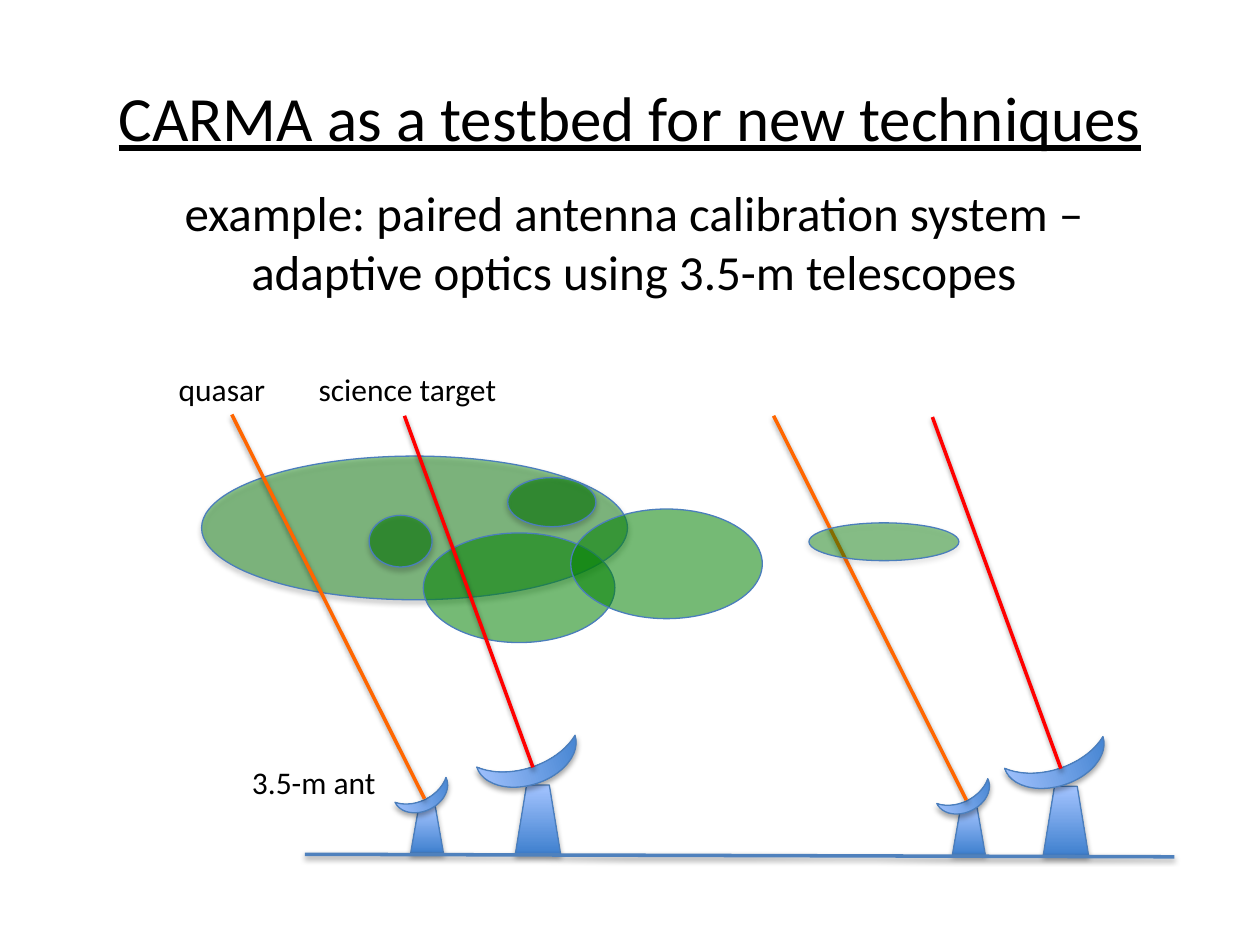
from lxml.etree import SubElement
from pptx import Presentation
from pptx.dml.color import RGBColor
from pptx.enum.shapes import MSO_CONNECTOR, MSO_SHAPE
from pptx.enum.text import MSO_ANCHOR, PP_ALIGN
from pptx.oxml.ns import qn
from pptx.util import Emu, Pt

PX = 9144  # EMU in one px, 100 px to the inch
FONT = "Calibri"
BLACK = "000000"
OUTLINE = "4B7EBC"
GROUND = "4F81BD"
CLOUD = "008000"
METAL_DARK, METAL_LIGHT = "3F80CE", "A4C4FF"
SCIENCE_BEAM, QUASAR_BEAM = "FF0000", "FF6600"

# Parts are placed relative to the top left corner of the pedestal.
LARGE_ANTENNA = dict(pedestal=(36, 55), dish=(-1, -55, 27, 82), tilt=252.1,
                     focus=(14, -14), reach=(-102, -279), beam=SCIENCE_BEAM)
SMALL_ANTENNA = dict(pedestal=(26, 37), dish=(3, -28, 17, 45), tilt=244,
                     focus=(11, -6), reach=(-153, -305), beam=QUASAR_BEAM)


def px(*lengths):
    return [Emu(length * PX) for length in lengths]


def rgb(value):
    return RGBColor.from_string(value)


def set_shadow(shape, opacity, distance=1.8):
    """Replace the theme shadow by a soft one below; opacity 0 leaves none."""
    effects = SubElement(shape._element.spPr, qn("a:effectLst"))
    if opacity:
        shadow = SubElement(effects, qn("a:outerShdw"), blurRad=str(Pt(3.1)),
                            dist=str(Pt(distance)), dir="5400000",
                            rotWithShape="0")
        color = SubElement(shadow, qn("a:srgbClr"), val=BLACK)
        SubElement(color, qn("a:alpha"), val=str(opacity * 1000))


def add_text(slide, text, box, size, align=PP_ALIGN.LEFT,
             anchor=MSO_ANCHOR.TOP, underline=False):
    frame = slide.shapes.add_textbox(*px(*box)).text_frame
    frame.word_wrap = True
    frame.vertical_anchor = anchor
    paragraph = frame.paragraphs[0]
    paragraph.alignment = align
    run = paragraph.add_run()
    run.text = text
    run.font.name = FONT
    run.font.size = Pt(size)
    run.font.underline = underline
    run.font.color.rgb = rgb(BLACK)


def add_outlined(slide, preset, box):
    shape = slide.shapes.add_shape(preset, *px(*box))
    shape.line.color.rgb = rgb(OUTLINE)
    shape.line.width = Pt(0.75)
    return shape


def add_cloud(slide, box, opacity, shadow):
    cloud = add_outlined(slide, MSO_SHAPE.OVAL, box)
    cloud.fill.solid()
    cloud.fill.fore_color.rgb = rgb(CLOUD)
    color = cloud._element.spPr.find(qn("a:solidFill")).find(qn("a:srgbClr"))
    SubElement(color, qn("a:alpha"), val=str(opacity * 1000))
    set_shadow(cloud, shadow)


def add_metal_part(slide, preset, box, rotation=0):
    part = add_outlined(slide, preset, box)
    part.rotation = rotation
    part.fill.gradient()
    part.fill.gradient_angle = 90
    stops = zip(part.fill.gradient_stops, (0, 1), (METAL_DARK, METAL_LIGHT))
    for stop, position, color in stops:
        stop.position = position
        stop.color.rgb = rgb(color)
    set_shadow(part, 35)


def add_line(slide, start, end, color):
    line = slide.shapes.add_connector(MSO_CONNECTOR.STRAIGHT,
                                      *px(*start, *end))
    line.line.color.rgb = rgb(color)
    line.line.width = Pt(2)
    set_shadow(line, 38, distance=1.6)


def add_antenna(slide, x, y, pedestal, dish, tilt, focus, reach, beam):
    """Draw pedestal, dish and line of sight; x, y is the pedestal's corner."""
    dish_x, dish_y, *dish_size = dish
    focus_x, focus_y = x + focus[0], y + focus[1]
    add_metal_part(slide, MSO_SHAPE.TRAPEZOID, (x, y, *pedestal))
    add_metal_part(slide, MSO_SHAPE.MOON,
                   (x + dish_x, y + dish_y, *dish_size), tilt)
    add_line(slide, (focus_x, focus_y),
             (focus_x + reach[0], focus_y + reach[1]), beam)


def main():
    deck = Presentation()
    deck.slide_width, deck.slide_height = px(1000, 750)
    slide = deck.slides.add_slide(deck.slide_layouts[6])

    add_text(slide, "CARMA as a testbed for new techniques",
             (50, 30, 900, 125), 36, align=PP_ALIGN.CENTER,
             anchor=MSO_ANCHOR.MIDDLE, underline=True)

    add_cloud(slide, (160, 362, 338, 114), opacity=43, shadow=35)
    add_cloud(slide, (293, 409, 50, 41), opacity=51, shadow=35)
    add_cloud(slide, (336, 423, 152, 87), opacity=54, shadow=0)

    add_antenna(slide, 409, 623, **LARGE_ANTENNA)
    add_antenna(slide, 326, 640, **SMALL_ANTENNA)
    add_antenna(slide, 828, 624, **LARGE_ANTENNA)
    add_antenna(slide, 756, 641, **SMALL_ANTENNA)

    add_cloud(slide, (642, 415, 119, 30), opacity=43, shadow=18)
    add_cloud(slide, (403, 379, 70, 39), opacity=51, shadow=35)
    add_cloud(slide, (453, 404, 152, 87), opacity=54, shadow=0)

    add_line(slide, (242, 678), (932, 680), GROUND)

    add_text(slide, "3.5-m ant", (184, 601, 130, 40), 18,
             align=PP_ALIGN.CENTER)
    add_text(slide, "quasar", (132, 289, 94, 36), 18)
    add_text(slide, "science target", (243, 289, 178, 36), 18)
    add_text(slide, "example: paired antenna calibration system – "
             "adaptive optics using 3.5-m telescopes",
             (94, 140, 818, 104), 28, align=PP_ALIGN.CENTER)

    deck.save("out.pptx")


if __name__ == "__main__":
    main()
